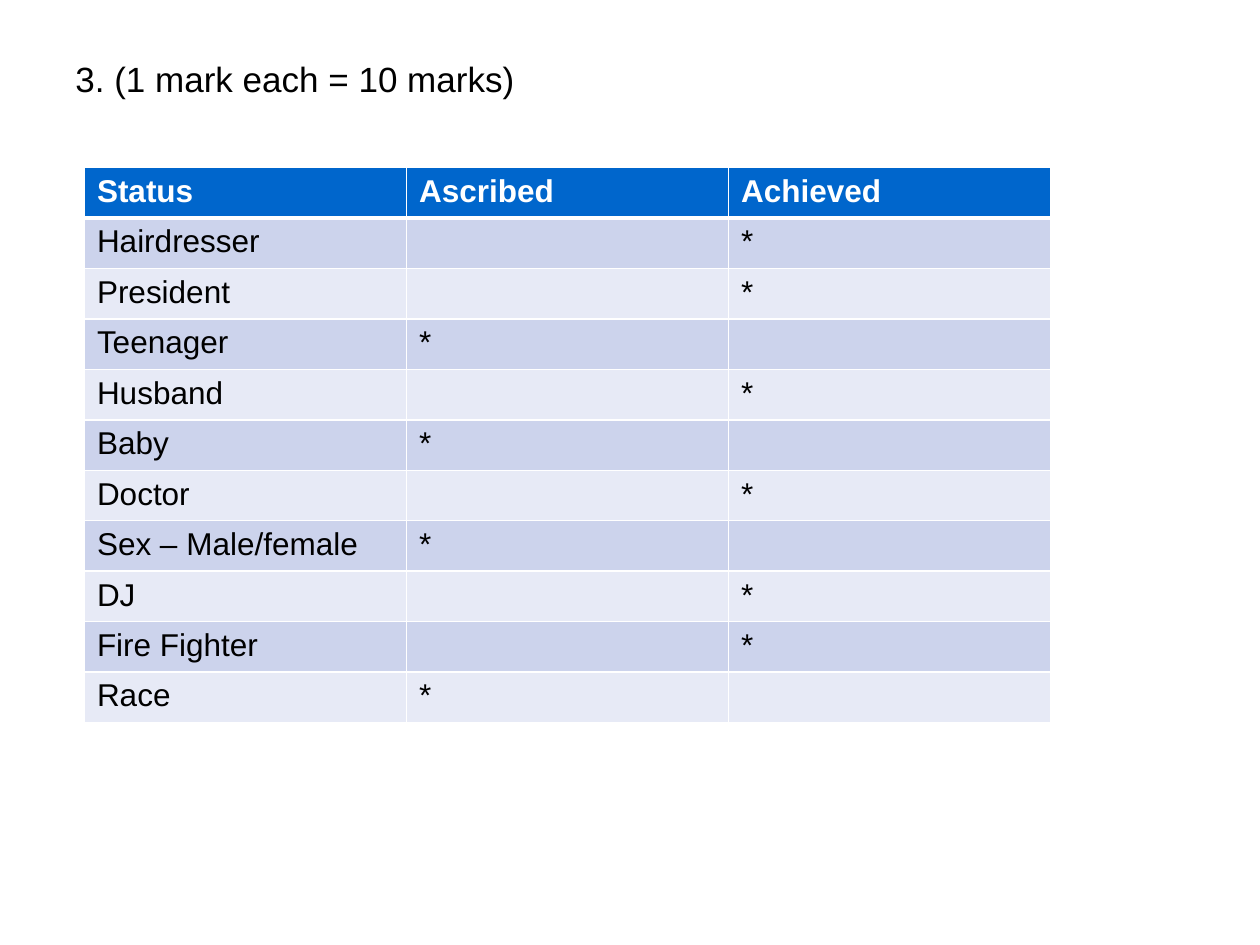
from dataclasses import dataclass

from lxml.etree import SubElement
from pptx import Presentation
from pptx.dml.color import RGBColor
from pptx.enum.text import MSO_ANCHOR
from pptx.oxml.ns import qn
from pptx.util import Inches, Pt


@dataclass(frozen=True)
class Theme:
    font: str = "Arial"
    title_size: int = 20
    table_size: int = 18
    text: str = "000000"
    header_text: str = "FFFFFF"
    header_fill: str = "0066CC"
    band_fills: tuple = ("CCD3EC", "E7EAF6")
    border: str = "FFFFFF"
    border_width: int = 1
    header_rule_width: int = 3


THEME = Theme()
HEADERS = ("Status", "Ascribed", "Achieved")
STATUSES = (
    ("Hairdresser", "Achieved"),
    ("President", "Achieved"),
    ("Teenager", "Ascribed"),
    ("Husband", "Achieved"),
    ("Baby", "Ascribed"),
    ("Doctor", "Achieved"),
    ("Sex – Male/female", "Ascribed"),
    ("DJ", "Achieved"),
    ("Fire Fighter", "Achieved"),
    ("Race", "Ascribed"),
)


def style_paragraph(paragraph, size, color, bold=False):
    font = paragraph.font
    font.name = THEME.font
    font.size = Pt(size)
    font.bold = bold
    font.color.rgb = RGBColor.from_string(color)


def add_title(slide, text):
    box = slide.shapes.add_textbox(Inches(0.5), Inches(0.21), Inches(9), Inches(1.12))
    frame = box.text_frame
    frame.word_wrap = True
    frame.vertical_anchor = MSO_ANCHOR.TOP
    frame.margin_top = Inches(0.25)
    frame.text = text
    style_paragraph(frame.paragraphs[0], THEME.title_size, THEME.text)


def set_borders(cell, top, bottom):
    """Draw all four cell borders; top and bottom are widths in points."""
    properties = cell._tc.get_or_add_tcPr()
    side = THEME.border_width
    for tag, width in (("lnL", side), ("lnR", side), ("lnT", top), ("lnB", bottom)):
        line = SubElement(properties, qn(f"a:{tag}"), w=str(Pt(width)))
        fill = SubElement(line, qn("a:solidFill"))
        SubElement(fill, qn("a:srgbClr"), val=THEME.border)


def fill_cell(cell, text, row):
    is_header = row == 0
    thin, thick = THEME.border_width, THEME.header_rule_width
    set_borders(cell, thick if row == 1 else thin, thick if is_header else thin)
    fill = THEME.header_fill if is_header else THEME.band_fills[(row - 1) % 2]
    cell.fill.solid()
    cell.fill.fore_color.rgb = RGBColor.from_string(fill)
    cell.text = text
    color = THEME.header_text if is_header else THEME.text
    style_paragraph(cell.text_frame.paragraphs[0], THEME.table_size, color, is_header)


def add_status_table(slide):
    rows = [HEADERS]
    for status, kind in STATUSES:
        rows.append((status, *("*" if kind == header else "" for header in HEADERS[1:])))
    table = slide.shapes.add_table(
        len(rows), len(HEADERS),
        Inches(0.67), Inches(1.33), Inches(7.67), Inches(0.4 * len(rows)),
    ).table
    for row, texts in enumerate(rows):
        for column, text in enumerate(texts):
            fill_cell(table.cell(row, column), text, row)


def main():
    presentation = Presentation()
    presentation.slide_width = Inches(10)
    presentation.slide_height = Inches(7.5)
    slide = presentation.slides.add_slide(presentation.slide_layouts[6])
    add_title(slide, "3. (1 mark each = 10 marks)")
    add_status_table(slide)
    presentation.save("out.pptx")


if __name__ == "__main__":
    main()
